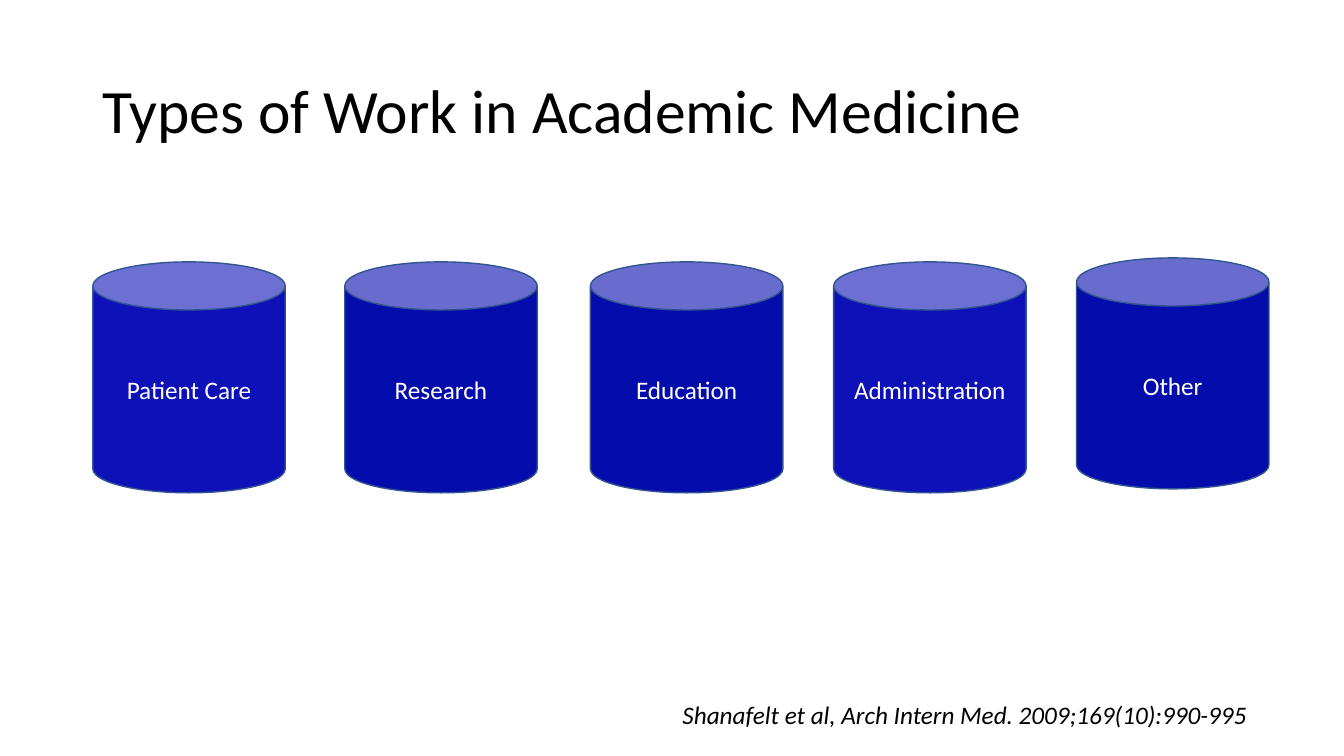
from pptx import Presentation
from pptx.dml.color import RGBColor
from pptx.enum.shapes import MSO_SHAPE
from pptx.enum.text import MSO_ANCHOR, PP_ALIGN
from pptx.util import Cm, Pt

CAN = MSO_SHAPE.CAN
MIDDLE = MSO_ANCHOR.MIDDLE
LEFT, CENTER = PP_ALIGN.LEFT, PP_ALIGN.CENTER
TITLE_ONLY = 5

BLUE, BRIGHT_BLUE = "040CAC", "0D11B7"
CAN_TOP = 6.6
# label, left, top (cm), fill
WORK_TYPES = [
    ("Patient Care", 2.34, CAN_TOP, BRIGHT_BLUE),
    ("Research", 8.69, CAN_TOP, BLUE),
    ("Education", 14.88, CAN_TOP, BLUE),
    ("Administration", 21.01, CAN_TOP, BRIGHT_BLUE),
    ("Other", 27.13, 6.5, BLUE),
]


def color(hex_string):
    return RGBColor.from_string(hex_string)


class SlideBuilder:
    """Holds the text style and the slide being built."""

    font_name = "Calibri"
    text_color = "000000"
    outline_color = "325491"

    def __init__(self, presentation):
        self.slide = presentation.slides.add_slide(presentation.slide_layouts[TITLE_ONLY])

    def set_text(self, text_frame, text, size, hex_color, align=LEFT, italic=False):
        text_frame.text = text
        paragraph = text_frame.paragraphs[0]
        paragraph.alignment = align
        font = paragraph.runs[0].font
        font.name = self.font_name
        font.size = Pt(size)
        font.italic = italic
        font.color.rgb = color(hex_color)

    def title(self, text, left, top, width, height):
        shape = self.slide.shapes.title
        shape.left, shape.top = Cm(left), Cm(top)
        shape.width, shape.height = Cm(width), Cm(height)
        text_frame = shape.text_frame
        text_frame.vertical_anchor = MIDDLE
        self.set_text(text_frame, text, 44, self.text_color)
        text_frame.paragraphs[0].line_spacing = 0.9

    def citation(self, text, left, top, width, height):
        shape = self.slide.shapes.add_textbox(Cm(left), Cm(top), Cm(width), Cm(height))
        shape.text_frame.word_wrap = False
        self.set_text(shape.text_frame, text, 18, self.text_color, italic=True)

    def can(self, label, left, top, fill):
        shape = self.slide.shapes.add_shape(CAN, Cm(left), Cm(top), Cm(4.85), Cm(5.82))
        shape.shadow.inherit = False
        shape.fill.solid()
        shape.fill.fore_color.rgb = color(fill)
        shape.line.color.rgb = color(self.outline_color)
        shape.line.width = Pt(1)
        shape.text_frame.vertical_anchor = MIDDLE
        self.set_text(shape.text_frame, label, 18, "FFFFFF", CENTER)


def main():
    presentation = Presentation()
    presentation.slide_width = Cm(33.87)
    presentation.slide_height = Cm(19.05)
    builder = SlideBuilder(presentation)
    builder.title("Types of Work in Academic Medicine", 2.33, 1.01, 29.21, 3.68)
    builder.citation("Shanafelt et al, Arch Intern Med. 2009;169(10):990-995",
                     16.95, 17.5, 15.04, 1.03)
    for work_type in WORK_TYPES:
        builder.can(*work_type)
    presentation.save("out.pptx")


if __name__ == "__main__":
    main()
